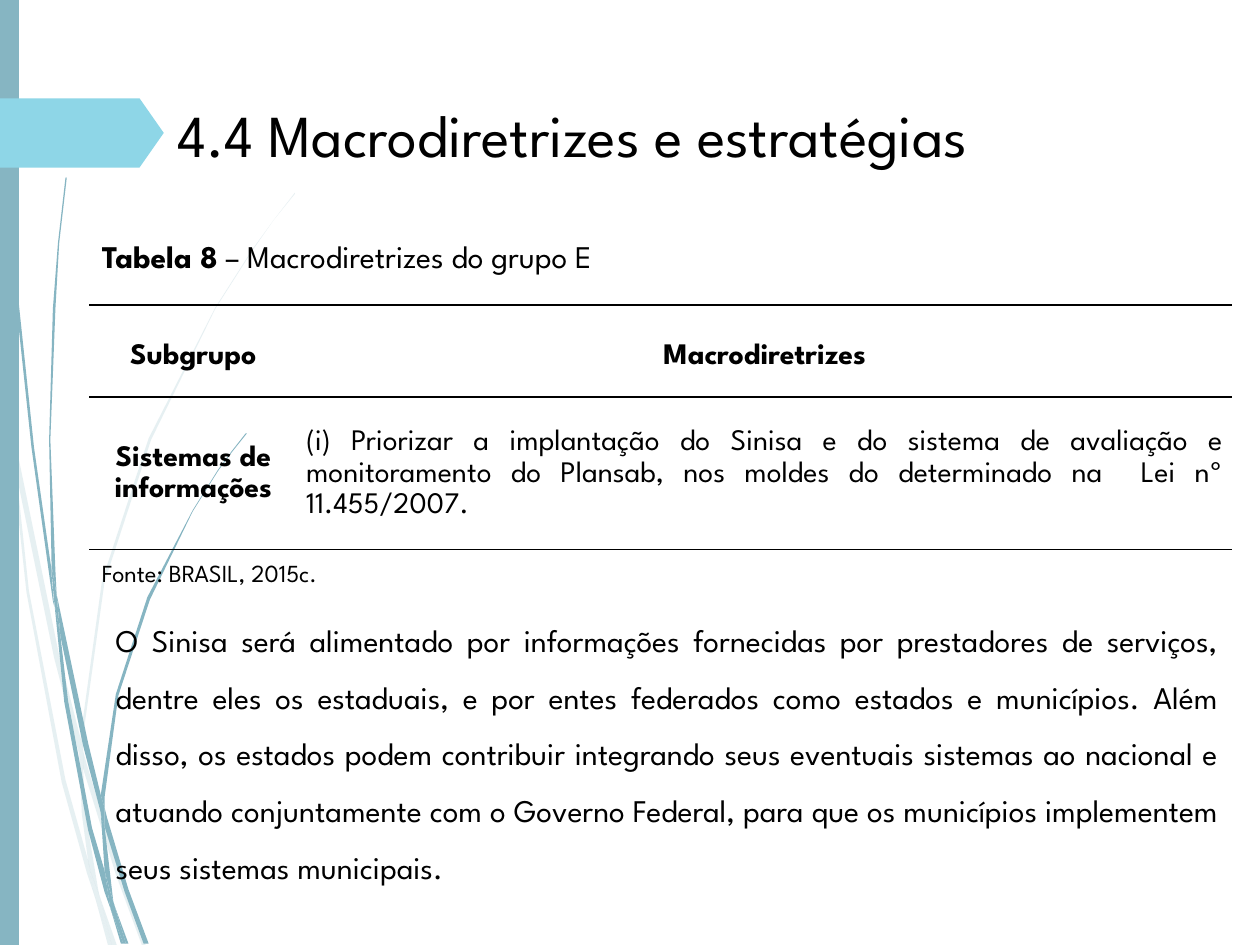
from lxml import etree
from pptx import Presentation
from pptx.dml.color import RGBColor
from pptx.enum.shapes import MSO_SHAPE
from pptx.enum.text import MSO_ANCHOR, PP_ALIGN
from pptx.oxml import parse_xml
from pptx.oxml.ns import nsdecls, qn
from pptx.util import Pt

PX = 9144  # EMU per px, 100 px to the inch
FONT = "League Spartan"
TEAL, SKY, BLACK, WHITE = "86B5C2", "8ED6E7", "000000", "FFFFFF"


def paint(fill, color):
    fill.solid()
    fill.fore_color.rgb = RGBColor.from_string(color)


def write(tf, runs, size, align=PP_ALIGN.JUSTIFY, spacing=1.0):
    """Fill the frame with one paragraph of (text, bold) runs."""
    tf.word_wrap = True
    p = tf.paragraphs[0]
    p.alignment, p.line_spacing = align, spacing
    p.font.name, p.font.size = FONT, Pt(size)
    paint(p.font.fill, BLACK)
    for text, bold in runs:
        r = p.add_run()
        r.text, r.font.bold = text, bold
    return p


prs = Presentation()
prs.slide_width, prs.slide_height = 1000 * PX, 750 * PX
s = prs.slides.add_slide(prs.slide_layouts[6])
paint(s.background.fill, WHITE)

# Grass blades: outline points in px
pale_blades = [
    [(8, 350), (6, 322), (0, 282), (0, 299), (8, 344)],
    [(43, 522), (63, 599), (64, 586), (47, 520), (11, 345), (13, 376)],
    [(69, 607), (66, 596), (66, 610), (92, 694), (113, 751), (116, 751), (95, 692)],
    [(89, 751), (93, 751), (79, 711)],
    [(70, 683), (52, 619), (23, 469), (13, 376), (8, 350), (21, 470), (49, 621),
     (69, 693), (76, 714), (74, 707)],
    [(63, 599), (65, 646), (70, 683), (72, 692), (79, 711), (78, 706), (68, 646),
     (66, 610), (66, 608)],
    [(66, 584), (83, 462), (120, 349), (171, 245), (201, 198), (217, 175), (234, 154),
     (234, 153), (217, 175), (201, 197), (171, 244), (118, 348), (81, 461), (64, 584),
     (64, 586), (66, 596)],
    [(76, 714), (86, 751), (89, 751)],
    [(66, 608), (66, 610), (66, 596), (64, 586), (63, 599)],
    [(72, 692), (70, 683), (74, 707), (76, 714), (89, 751), (79, 711)],
]
dark_blades = [
    [(5, 110), (12, 233), (25, 355), (42, 477), (43, 481), (41, 457), (41, 453),
     (27, 355), (14, 232), (6, 109), (3, 48), (3, 0), (2, 0), (3, 48)],
    [(66, 592), (80, 645), (80, 633), (80, 631), (70, 590), (45, 472), (48, 505)],
    [(85, 649), (83, 641), (83, 656), (99, 708), (114, 749), (118, 749), (102, 706)],
    [(83, 691), (73, 657), (54, 556), (48, 505), (43, 477), (51, 557), (70, 659),
     (83, 708), (88, 722), (87, 717)],
    [(45, 472), (44, 453), (40, 349), (44, 245), (47, 193), (53, 141), (52, 141),
     (46, 193), (42, 245), (39, 349), (41, 449)],
    [(100, 749), (102, 749), (91, 719)],
    [(43, 477), (48, 505), (45, 472), (41, 449), (41, 453)],
    [(83, 633), (94, 552), (119, 476), (153, 406), (173, 374), (184, 359), (196, 344),
     (195, 344), (184, 358), (173, 373), (153, 405), (117, 474), (92, 551), (80, 631),
     (83, 641)],
    [(88, 722), (96, 749), (98, 749)],
    [(80, 645), (83, 691), (87, 706), (91, 719), (90, 716), (83, 656), (81, 651)],
    [(80, 645), (81, 651), (83, 656), (83, 641), (80, 631), (80, 633)],
    [(87, 706), (83, 691), (87, 717), (88, 722), (98, 749), (100, 749), (91, 719)],
]
for blades, opacity in ((pale_blades, 20), (dark_blades, 100)):
    for start, *rest in blades:
        builder = s.shapes.build_freeform(*start, scale=PX)
        builder.add_line_segments(rest)
        sp = builder.convert_to_shape()
        sp.shadow.inherit = False
        paint(sp.fill, TEAL)
        sp.line.fill.background()
        if opacity < 100:
            color = sp.fill._xPr.find(".//" + qn("a:srgbClr"))
            etree.SubElement(color, qn("a:alpha"), val=str(opacity * 1000))

# Side bar and title tag
for preset, top, width, height, color in (
    (MSO_SHAPE.RECTANGLE, 0, 15, 750, TEAL),
    (MSO_SHAPE.PENTAGON, 78, 130, 55, SKY),
):
    sp = s.shapes.add_shape(preset, 0, top * PX, width * PX, height * PX)
    sp.shadow.inherit = False
    paint(sp.fill, color)
    sp.line.fill.background()
    if preset == MSO_SHAPE.PENTAGON:
        sp.adjustments[0] = 0.35

# Texts: box, runs, size, alignment, line spacing, space before, anchor
body = (
    "O Sinisa será alimentado por informações fornecidas por prestadores de serviços, "
    "dentre eles os estaduais, e por entes federados como estados e municípios. Além "
    "disso, os estados podem contribuir integrando seus eventuais sistemas ao nacional e "
    "atuando conjuntamente com o Governo Federal, para que os municípios implementem "
    "seus sistemas municipais."
)
J, L, C = PP_ALIGN.JUSTIFY, PP_ALIGN.LEFT, PP_ALIGN.CENTER
TOP, MIDDLE = MSO_ANCHOR.TOP, MSO_ANCHOR.MIDDLE
for box, runs, size, align, spacing, before, anchor in (
    ((71, 168, 906, 74), [("Tabela 8", True), (" – Macrodiretrizes do grupo E", False)],
     18, J, 1.5, 10, TOP),
    ((71, 438, 874, 50), [("Fonte: BRASIL, 2015c.", False)], 14, J, 1.0, 10, TOP),
    ((131, 68, 845, 77), [("4.4 Macrodiretrizes e estratégias", False)],
     34, L, 1.0, 0, MIDDLE),
    ((82, 473, 895, 313), [(body, False)], 18, J, 1.5, 0, TOP),
):
    tf = s.shapes.add_textbox(*(v * PX for v in box)).text_frame
    tf.vertical_anchor = anchor
    write(tf, runs, size, align, spacing).space_before = Pt(before)

# Table with horizontal rules only
rows = [
    [("Subgrupo", True, C, 1.5), ("Macrodiretrizes", True, C, 1.5)],
    [("Sistemas de informações", True, C, 1.15),
     ("(i) Priorizar a implantação do Sinisa e do sistema de avaliação e monitoramento "
      "do Plansab, nos moldes do determinado na  Lei nº 11.455/2007.", False, J, 1.15)],
]
table = s.shapes.add_table(2, 2, 71 * PX, 242 * PX, 907 * PX, 194 * PX).table
table.first_row = table.horz_banding = False
for column, width in zip(table.columns, (165, 742)):
    column.width = width * PX
for row, height in zip(table.rows, (73, 121)):
    row.height = height * PX
rule = f'<a:solidFill><a:srgbClr val="{BLACK}"/></a:solidFill>'
borders = {"lnL": "<a:noFill/>", "lnR": "<a:noFill/>", "lnT": rule, "lnB": rule}
for i, row in enumerate(rows):
    for j, (text, bold, align, spacing) in enumerate(row):
        cell = table.cell(i, j)
        cell.fill.background()
        cell.vertical_anchor = MIDDLE
        cell.margin_left = cell.margin_right = 7 * PX
        cell.margin_top = cell.margin_bottom = 0
        write(cell.text_frame, [(text, bold)], 17, align, spacing)
        tcPr = cell._tc.get_or_add_tcPr()
        for k, (side, fill) in enumerate(borders.items()):
            tcPr.insert(k, parse_xml(
                f'<a:{side} {nsdecls("a")} w="{Pt(1)}">{fill}</a:{side}>'))

prs.save("out.pptx")
